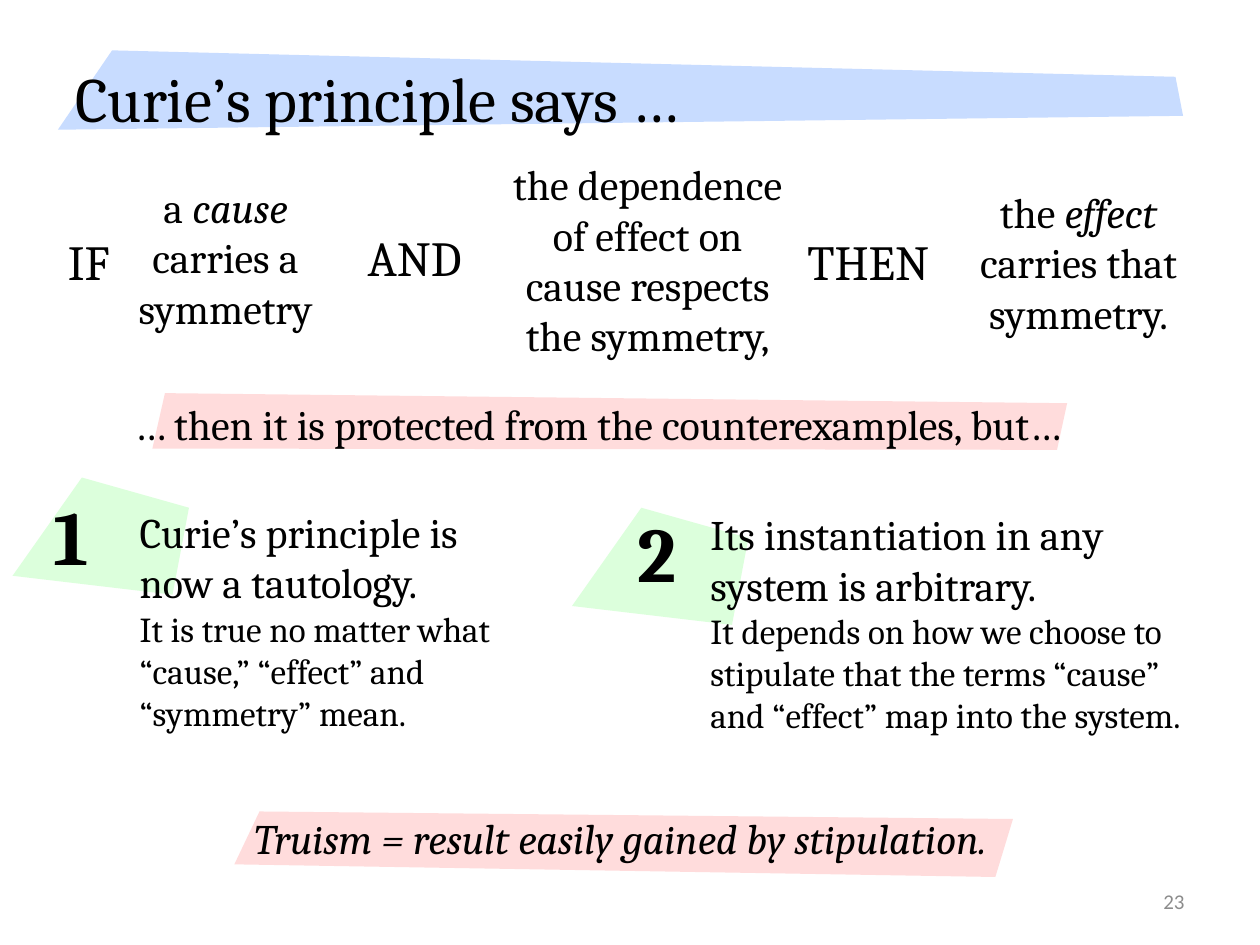
from dataclasses import dataclass

import pptx
import pptx.dml.color
import pptx.enum.text
import pptx.util
from pptx.util import Inches

RGBColor = pptx.dml.color.RGBColor
Align = pptx.enum.text.PP_ALIGN
Anchor = pptx.enum.text.MSO_ANCHOR

BLACK = RGBColor(0x00, 0x00, 0x00)
GRAY = RGBColor(0x8C, 0x8C, 0x8C)
BLUE = RGBColor(0xC8, 0xDC, 0xFF)
GREEN = RGBColor(0xDC, 0xFF, 0xDC)
PINK = RGBColor(0xFF, 0xDC, 0xDC)

Box = tuple[float, float, float, float]
Point = tuple[float, float]


@dataclass(frozen=True)
class Run:
    text: str
    size: float | None = None
    italic: bool | None = None


@dataclass(frozen=True)
class Patch:
    color: RGBColor
    points: list[Point]


@dataclass(frozen=True)
class Clause:
    box: Box
    runs: list[Run]


@dataclass(frozen=True)
class Objection:
    number: str
    number_box: Box
    patch_origin: Point
    text_box: Box
    claim: str
    reason: str


HIGHLIGHTS = [
    Patch(BLUE, [(0.89, 0.4), (9.33, 0.61), (9.39, 0.92), (0.46, 1.03)]),
    Patch(PINK, [(1.31, 3.12), (8.47, 3.2), (8.39, 3.57), (1.21, 3.56)]),
    Patch(PINK, [(2.06, 6.44), (8.04, 6.5), (7.9, 6.96), (1.86, 6.86)]),
]

NUMBER_PATCH = [(0.55, 0), (1.4, 0.24), (1.27, 0.93), (0, 0.78)]

CONNECTIVES = {
    "IF": (0.44, 1.79, 0.55, 0.57),
    "AND": (2.82, 1.76, 1.05, 0.57),
    "THEN": (6.31, 1.79, 1.25, 0.57),
}

CLAUSES = [
    Clause((0.81, 1.39, 1.96, 1.31),
           [Run("a "), Run("cause", italic=True), Run(" carries a symmetry")]),
    Clause((3.94, 1.21, 2.4, 1.72),
           [Run("the dependence of effect on cause respects the symmetry,")]),
    Clause((7.58, 1.43, 1.96, 1.31),
           [Run("the "), Run("effect", italic=True), Run(" carries that symmetry.")]),
]

OBJECTIONS = [
    Objection("1", (0.33, 3.83, 0.51, 0.84), (0.1, 3.79), (1.01, 3.97, 3.14, 1.92),
              "Curie’s principle is now a tautology.",
              "It is true no matter what “cause,” “effect” and “symmetry” mean."),
    Objection("2", (4.96, 3.96, 0.51, 0.84), (4.54, 4.03), (5.54, 3.99, 3.97, 1.92),
              "Its instantiation in any system is arbitrary.",
              "It depends on how we choose to stipulate that the terms “cause” "
              "and “effect” map into the system."),
]


def add_text(slide, box: Box, *paragraphs: str | list[Run], size: float = 24,
             font: str = "Cambria", color: RGBColor = BLACK, bold: bool = False,
             italic: bool = False, align: Align = Align.LEFT,
             anchor: Anchor = Anchor.TOP, wrap: bool = True) -> None:
    """Add a text box; each paragraph is a string or a list of runs."""
    frame = slide.shapes.add_textbox(*map(Inches, box)).text_frame
    frame.word_wrap = wrap
    frame.vertical_anchor = anchor
    for index, content in enumerate(paragraphs):
        paragraph = frame.add_paragraph() if index else frame.paragraphs[0]
        paragraph.alignment = align
        for part in [Run(content)] if isinstance(content, str) else content:
            run = paragraph.add_run()
            run.text = part.text
            run.font.name = font
            run.font.size = pptx.util.Pt(part.size or size)
            run.font.bold = bold
            run.font.italic = italic if part.italic is None else part.italic
            run.font.color.rgb = color


def add_patch(slide, patch: Patch) -> None:
    start, *rest = [(Inches(x), Inches(y)) for x, y in patch.points]
    builder = slide.shapes.build_freeform(*start)
    builder.add_line_segments(rest, close=True)
    shape = builder.convert_to_shape()
    shape.shadow.inherit = False
    shape.fill.solid()
    shape.fill.fore_color.rgb = patch.color
    shape.line.fill.background()


def add_objection(slide, objection: Objection) -> None:
    left, top = objection.patch_origin
    add_patch(slide, Patch(GREEN, [(left + x, top + y) for x, y in NUMBER_PATCH]))
    add_text(slide, objection.number_box, objection.number,
             size=44, bold=True, wrap=False)
    add_text(slide, objection.text_box, objection.claim,
             [Run(objection.reason, size=20)])


def main() -> None:
    presentation = pptx.Presentation()
    presentation.slide_width = Inches(10)
    presentation.slide_height = Inches(7.5)
    slide = presentation.slides.add_slide(presentation.slide_layouts[6])

    for patch in HIGHLIGHTS:
        add_patch(slide, patch)
    add_text(slide, (0.5, 0.3, 9, 0.94), "Curie’s principle says …",
             size=36, anchor=Anchor.MIDDLE)
    for word, box in CONNECTIVES.items():
        add_text(slide, box, word, size=28, wrap=False)
    for clause in CLAUSES:
        add_text(slide, clause.box, clause.runs, align=Align.CENTER)
    add_text(slide, (0.97, 3.11, 7.65, 0.5),
             "… then it is protected from the counterexamples, but…", wrap=False)
    for objection in OBJECTIONS:
        add_objection(slide, objection)
    add_text(slide, (1.92, 6.4, 6.26, 0.5),
             "Truism = result easily gained by stipulation.", italic=True, wrap=False)
    add_text(slide, (7.17, 6.95, 2.33, 0.4), "23", size=12, font="Calibri",
             color=GRAY, align=Align.RIGHT, anchor=Anchor.MIDDLE)

    presentation.save("out.pptx")


if __name__ == "__main__":
    main()
